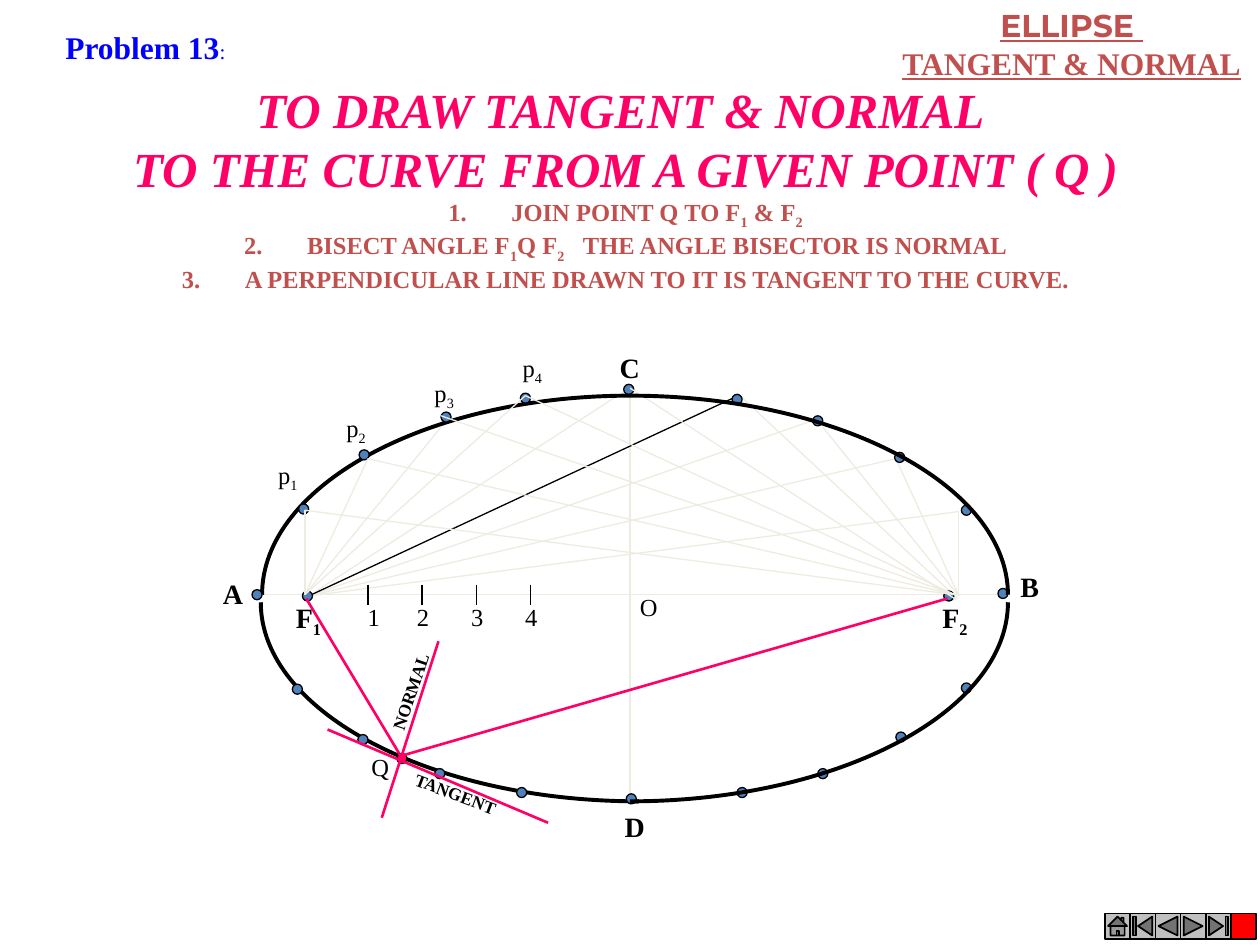
from lxml.etree import SubElement
from pptx import Presentation
from pptx.dml.color import RGBColor
from pptx.enum.shapes import MSO_CONNECTOR, MSO_SHAPE
from pptx.enum.text import MSO_ANCHOR, MSO_AUTO_SIZE, PP_ALIGN
from pptx.oxml.ns import qn
from pptx.util import Cm, Pt

BLACK = RGBColor(0x00, 0x00, 0x00)
PALE = RGBColor(0xEE, 0xEC, 0xE1)
STEEL = RGBColor(0x4F, 0x81, 0xBD)
PINK = RGBColor(0xFF, 0x00, 0x66)
BRICK = RGBColor(0xC0, 0x50, 0x4D)
BLUE = RGBColor(0x00, 0x00, 0xFF)
RED = RGBColor(0xFF, 0x00, 0x00)
GREY = RGBColor(0xC0, 0xC0, 0xC0)
SERIF = "Times New Roman"

# Positions are in inches; underscores enclose a subscript, or a space to widen.
HEADINGS = ["TO DRAW TANGENT & NORMAL ", "TO THE CURVE FROM A GIVEN POINT ( Q )"]
STEPS = [
    "JOIN POINT Q TO F_1_ & F_2_",
    "BISECT ANGLE F_1_Q F_2__ _THE ANGLE BISECTOR IS NORMAL",
    "A PERPENDICULAR LINE DRAWN TO IT IS TANGENT TO THE CURVE.",
]

# Curve points: x, y of the ray to the near focus, y of the ray to the far focus
LEFT_FOCUS, RIGHT_FOCUS = (2.42, 4.72), (7.58, 4.72)
LEFT_POINTS = [(2.42, 4.05, 4.05), (2.92, 3.64, 3.64), (3.5, 3.39, 3.3), (4.17, 3.14, 3.14)]
RIGHT_NEAR, RIGHT_FAR = (7.61, 4.73), (2.45, 4.73)
RIGHT_POINTS = [(7.61, 4.06, 4.06), (7.11, 3.64, 3.64), (6.53, 3.39, 3.31)]
AXES = [((2, 4.72), (8, 4.72)), ((5, 3.05), (5, 6.39))]
UPPER_RAYS = [((2.42, 4.75), (5.01, 3.07)), ((5.85, 3.12), (7.6, 4.75))]
TOP_RAY = ((5, 3.08), (7.59, 4.76))
BLACK_RAY = ((5.86, 3.14), (2.45, 4.73))
TICKS = [2.92, 3.35, 3.78, 4.21]

# Quarter ellipses: centre x, centre y, signed radii
LEFT_ARCS = [(5, 4.72, -2.92, -1.58), (5.07, 4.78, -3, 1.58)]
RIGHT_ARCS = [(5, 4.78, 3, 1.58), (5, 4.72, 3, -1.58)]
BEZIER_RATIO = 0.55

DOT_SIZE = 0.08
DOTS = [
    (2, 4.68), (2.4, 4.69), (7.49, 4.69), (7.92, 4.67), (4.95, 3.05), (4.97, 6.3),
    (2.37, 4), (2.85, 3.57), (3.5, 3.27), (4.13, 3.12),
    (5.81, 3.13), (6.45, 3.3), (7.1, 3.59), (7.63, 4.01),
    (2.32, 5.43), (2.84, 5.83), (3.45, 6.1), (4.1, 6.25),
    (5.85, 6.25), (6.49, 6.1), (7.11, 5.81), (7.63, 5.42),
]

BOLD_LABELS = [
    ("A", 1.67, 4.53, 0.36), ("B", 8, 4.47, 0.35), ("C", 4.82, 2.73, 0.36),
    ("D", 4.86, 6.38, 0.36), ("F_1_", 2.25, 4.72, 0.41), ("F_2_", 7.38, 4.72, 0.41),
]
PLAIN_LABELS = [
    ("p_1_", 2.11, 3.6, 0.36), ("p_2_", 2.65, 3.23, 0.36), ("p_3_", 3.35, 2.95, 0.36),
    ("p_4_", 4.05, 2.75, 0.36), ("O", 4.98, 4.65, 0.34), ("Q", 2.85, 5.92, 0.34),
]
TURNED_LABELS = [("TANGENT", 3.18, 6.17, 0.89, 20.7), ("NORMAL", 2.84, 5.35, 0.84, 288.8)]

POINT_Q = (3.18, 6)
PINK_LINES = [
    ((2.43, 4.75), POINT_Q), (POINT_Q, (7.52, 4.75)),
    ((3.03, 6.49), (3.48, 5.09)), ((2.6, 5.79), (4.35, 6.53)),
]
BUTTONS = [
    (MSO_SHAPE.ACTION_BUTTON_HOME, GREY),
    (MSO_SHAPE.ACTION_BUTTON_BEGINNING, GREY),
    (MSO_SHAPE.ACTION_BUTTON_BACK_OR_PREVIOUS, GREY),
    (MSO_SHAPE.ACTION_BUTTON_FORWARD_OR_NEXT, GREY),
    (MSO_SHAPE.ACTION_BUTTON_END, GREY),
    (MSO_SHAPE.ACTION_BUTTON_CUSTOM, RED),
]


def lengths(*inches):
    return [Cm(value * 2.54) for value in inches]


def add_spans(para, text, size, color=BLACK, bold=False, italic=False, underline=False, font=SERIF):
    """Add the runs of a text, lowering or widening the parts between underscores."""
    for index, part in enumerate(text.split("_")):
        if not part:
            continue
        span = para.add_run()
        span.text = part
        span.font.name, span.font.size = font, Pt(size)
        span.font.bold, span.font.italic, span.font.underline = bold, italic, underline
        span.font.color.rgb = color
        if index % 2:
            name, value = ("spc", "700") if part == " " else ("baseline", "-25000")
            span.font._element.set(name, value)


def add_box(page, left, top, width, height):
    box = page.shapes.add_textbox(*lengths(left, top, width, height))
    box.text_frame.word_wrap = False
    return box


def add_label(page, text, left, top, width, height, size, bold=False):
    box = add_box(page, left, top, width, height)
    add_spans(box.text_frame.paragraphs[0], text, size, bold=bold)
    return box


def add_line(page, start, end, color=PALE, weight=0.75):
    line = page.shapes.add_connector(MSO_CONNECTOR.STRAIGHT, *lengths(*start, *end))
    line.line.color.rgb = color
    line.line.width = Pt(weight)
    SubElement(line._element.spPr, qn("a:effectLst"))


def add_rays(page, points, near, far):
    for x, near_y, far_y in points:
        add_line(page, near, (x, near_y))
        add_line(page, (x, far_y), far)


def add_arc(page, x, y, radius_x, radius_y):
    """Draw a quarter ellipse as one Bezier curve."""
    start, *others = [
        lengths(x + radius_x * across, y + radius_y * down)
        for across, down in [(0, 1), (BEZIER_RATIO, 1), (1, BEZIER_RATIO), (1, 0)]
    ]
    builder = page.shapes.build_freeform(*start)
    builder.add_line_segments(others, close=False)
    arc = builder.convert_to_shape()
    outline = next(arc._element.iter(qn("a:path")))
    segments = outline.findall(qn("a:lnTo"))
    curve = SubElement(outline, qn("a:cubicBezTo"))
    for segment in segments:
        curve.append(segment[0])
        outline.remove(segment)
    arc.shadow.inherit = False
    arc.fill.background()
    arc.line.color.rgb = BLACK
    arc.line.width = Pt(2.25)


def add_filled(page, kind, left, top, size, color, weight=0.75):
    shape = page.shapes.add_shape(kind, *lengths(left, top, size, size))
    shape.shadow.inherit = False
    shape.fill.solid()
    shape.fill.fore_color.rgb = color
    shape.line.color.rgb = BLACK
    shape.line.width = Pt(weight)


def write_title(title):
    title.left, title.top, title.width, title.height = lengths(0.93, 0.58, 8.07, 1.73)
    frame = title.text_frame
    frame.word_wrap = False
    frame.auto_size = MSO_AUTO_SIZE.SHAPE_TO_FIT_TEXT
    frame.vertical_anchor = MSO_ANCHOR.TOP
    for index, text in enumerate(HEADINGS + STEPS):
        para = frame.add_paragraph() if index else frame.paragraphs[0]
        para.alignment = PP_ALIGN.CENTER
        properties = para._p.get_or_add_pPr()
        properties.set("marL", str(Cm(1.27)))
        properties.set("indent", str(-Cm(1.27)))
        if text in STEPS:
            SubElement(properties, qn("a:buFont"), typeface="+mj-lt")
            SubElement(properties, qn("a:buAutoNum"), type="arabicPeriod")
            add_spans(para, text, 14, BRICK, bold=True)
        else:
            add_spans(para, text, 28, PINK, bold=True, italic=True)


def add_scale(page):
    """Tick marks on the axis, with their numbers set on tab stops."""
    for x in TICKS:
        add_line(page, (x, 4.64), (x, 4.8), BLACK)
    box = add_label(page, "1\t2\t3\t4", 2.82, 4.73, 1.66, 0.33, 14)
    box.text_frame.word_wrap = True
    properties = box.text_frame.paragraphs[0]._p.get_or_add_pPr()
    stops = SubElement(properties, qn("a:tabLst"))
    for x in TICKS[1:]:
        SubElement(stops, qn("a:tab"), pos=str(Cm((x - 2.96) * 2.54)), algn="l")


def main():
    deck = Presentation()
    deck.slide_width, deck.slide_height = lengths(10, 7.5)
    page = deck.slides.add_slide(deck.slide_layouts[5])
    write_title(page.shapes.title)

    for start, end in AXES + UPPER_RAYS:
        add_line(page, start, end)
    add_rays(page, RIGHT_POINTS, RIGHT_NEAR, RIGHT_FAR)
    add_line(page, *BLACK_RAY, BLACK)
    for arc in LEFT_ARCS:
        add_arc(page, *arc)
    for x, y in DOTS:
        add_filled(page, MSO_SHAPE.OVAL, x, y, DOT_SIZE, STEEL)
    add_line(page, *TOP_RAY)
    add_rays(page, LEFT_POINTS, LEFT_FOCUS, RIGHT_FOCUS)
    add_scale(page)
    for arc in RIGHT_ARCS:
        add_arc(page, *arc)

    add_filled(page, MSO_SHAPE.OVAL, 3.15, 5.98, DOT_SIZE, PINK)
    for start, end in PINK_LINES:
        add_line(page, start, end, PINK, 1.5)
    for text, left, top, width in BOLD_LABELS:
        add_label(page, text, left, top, width, 0.37, 16, bold=True)
    for text, left, top, width in PLAIN_LABELS:
        add_label(page, text, left, top, width, 0.33, 14)
    for text, left, top, width, angle in TURNED_LABELS:
        add_label(page, text, left, top, width, 0.27, 10, bold=True).rotation = angle

    topic = add_box(page, 7.05, 0, 2.91, 0.7).text_frame
    for para, text, font in [(topic.paragraphs[0], "ELLIPSE ", "Montserrat"),
                             (topic.add_paragraph(), "TANGENT & NORMAL", SERIF)]:
        para.alignment = PP_ALIGN.CENTER
        add_spans(para, text, 18, BRICK, bold=True, underline=True, font=font)
    problem = add_box(page, 0.42, 0.17, 1.48, 0.4).text_frame.paragraphs[0]
    add_spans(problem, "Problem 13", 18, BLUE, bold=True)
    add_spans(problem, ":", 12, BLUE)

    for index, (kind, color) in enumerate(BUTTONS):
        add_filled(page, kind, 8.77 + 0.2 * index, 7.25, 0.2, color, 1)
    deck.save("out.pptx")


if __name__ == "__main__":
    main()
